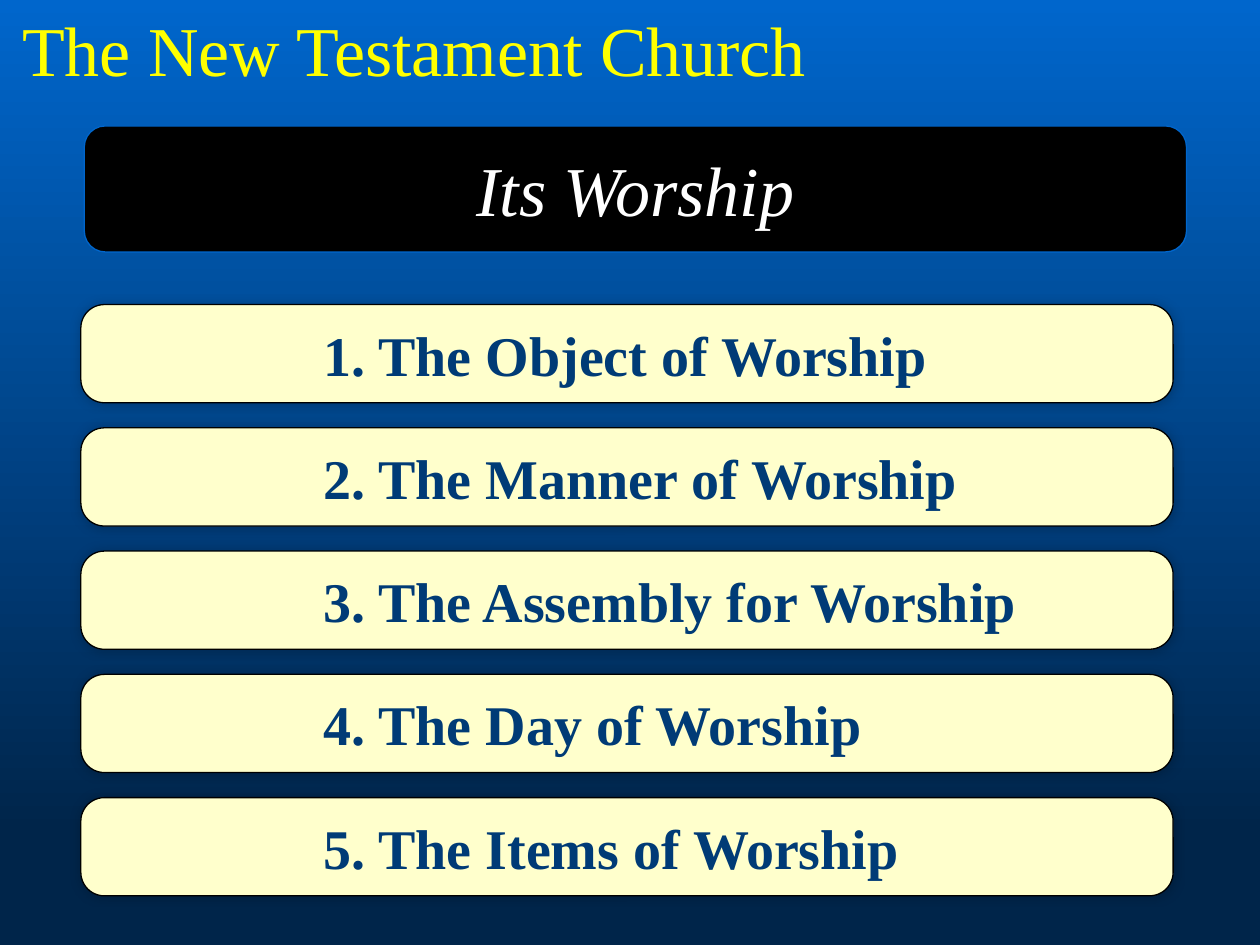
from lxml import etree
from pptx import Presentation
from pptx.dml.color import RGBColor
from pptx.enum.shapes import MSO_SHAPE
from pptx.enum.text import MSO_ANCHOR, PP_ALIGN
from pptx.oxml.ns import qn
from pptx.util import Cm, Pt

TITLE = "The New Testament Church"
SUBTITLE = "Its Worship"
TOPICS = [
    "1. The Object of Worship",
    "2. The Manner of Worship",
    "3. The Assembly for Worship",
    "4. The Day of Worship",
    "5. The Items of Worship",
]

FONT = "Times New Roman"
BLUE = RGBColor(0x00, 0x66, 0xCC)
DARK_BLUE = RGBColor(0x00, 0x25, 0x4A)
NAVY = RGBColor(0x00, 0x3B, 0x76)
YELLOW = RGBColor(0xFF, 0xFF, 0x00)
CREAM = RGBColor(0xFF, 0xFF, 0xCC)
BLACK = RGBColor(0x00, 0x00, 0x00)
WHITE = RGBColor(0xFF, 0xFF, 0xFF)

TOPIC_LEFT, TOPIC_TOP = 1.63, 6.14
TOPIC_WIDTH, TOPIC_HEIGHT = 22.02, 1.98
TOPIC_STEP = 2.485
TOPIC_INDENT = 4.75


def write(shape, text, size, color, alignment, bold=False, italic=False):
    paragraph = shape.text_frame.paragraphs[0]
    paragraph.text = text
    paragraph.alignment = alignment
    font = paragraph.runs[0].font
    font.name, font.size = FONT, Pt(size)
    font.bold, font.italic = bold, italic
    font.color.rgb = color


def add_panel(slide, left, top, width, height, fill, line):
    panel = slide.shapes.add_shape(
        MSO_SHAPE.ROUNDED_RECTANGLE, Cm(left), Cm(top), Cm(width), Cm(height)
    )
    panel.fill.solid()
    panel.fill.fore_color.rgb = fill
    panel.line.color.rgb = line
    panel.line.width = Pt(0.75)
    panel.shadow.inherit = False
    panel.text_frame.vertical_anchor = MSO_ANCHOR.MIDDLE
    return panel


def add_soft_shadow(shape):
    effects = shape.element.spPr.find(qn("a:effectLst"))
    shadow = etree.SubElement(
        effects, qn("a:outerShdw"), blurRad=str(Pt(6)), dist="0", dir="13500000"
    )
    color = etree.SubElement(shadow, qn("a:srgbClr"), val=str(BLACK))
    etree.SubElement(color, qn("a:alpha"), val="20000")


def paint_background(slide):
    fill = slide.background.fill
    fill.gradient()
    fill.gradient_angle = 270
    for stop, color, position in zip(fill.gradient_stops, (BLUE, DARK_BLUE), (0, 0.88)):
        stop.color.rgb = color
        stop.position = position


def main():
    presentation = Presentation()
    presentation.slide_width, presentation.slide_height = Cm(25.4), Cm(19.05)
    slide = presentation.slides.add_slide(presentation.slide_layouts[6])
    paint_background(slide)

    title = slide.shapes.add_textbox(Cm(0.1), Cm(0), Cm(16.5), Cm(1.96))
    title.text_frame.word_wrap = False
    write(title, TITLE, 40, YELLOW, PP_ALIGN.CENTER)

    banner = add_panel(slide, 1.7, 2.54, 22.22, 2.54, BLACK, BLUE)
    write(banner, SUBTITLE, 40, WHITE, PP_ALIGN.CENTER, italic=True)

    for index, topic in enumerate(TOPICS):
        top = TOPIC_TOP + index * TOPIC_STEP
        panel = add_panel(slide, TOPIC_LEFT, top, TOPIC_WIDTH, TOPIC_HEIGHT, CREAM, BLACK)
        panel.adjustments[0] = 0.24
        panel.text_frame.margin_left = Cm(TOPIC_INDENT)
        add_soft_shadow(panel)
        write(panel, topic, 32, NAVY, PP_ALIGN.LEFT, bold=True)

    presentation.save("out.pptx")


if __name__ == "__main__":
    main()
